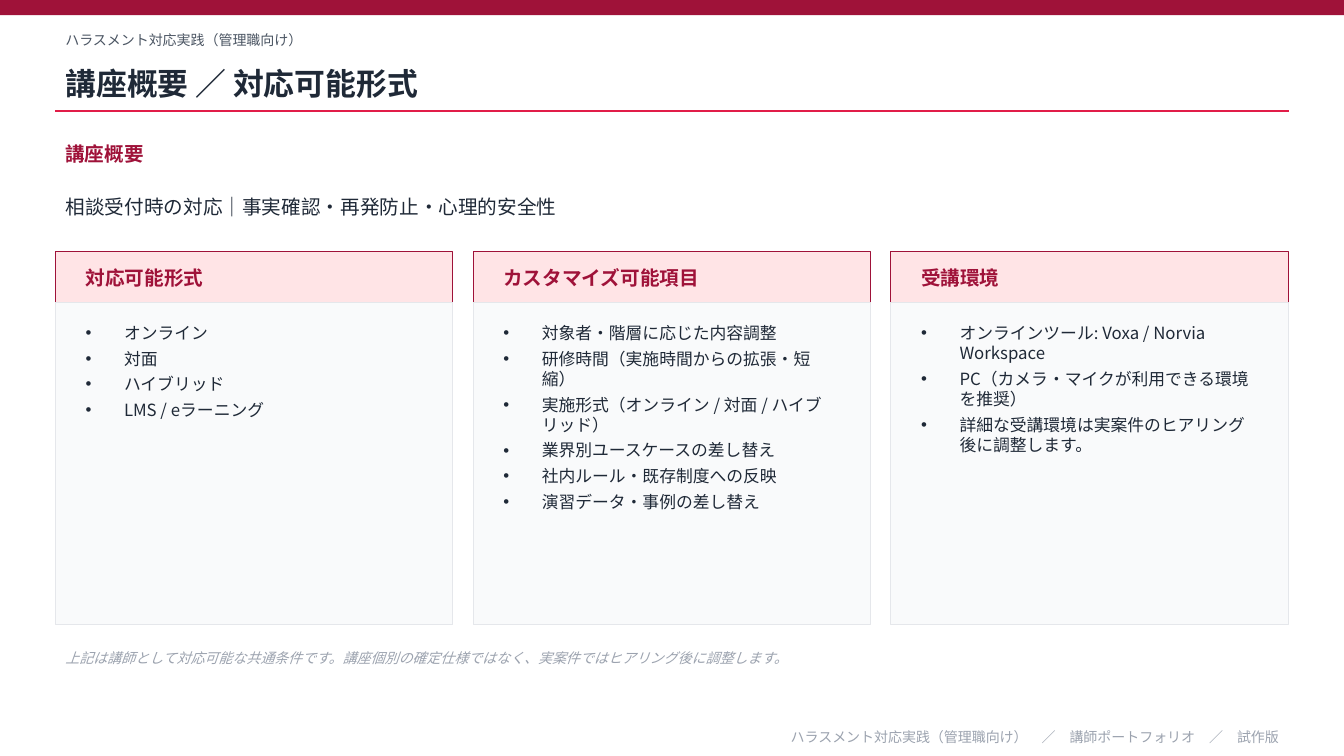
from lxml.etree import SubElement
from pptx import Presentation
from pptx.dml.color import RGBColor
from pptx.enum.shapes import MSO_CONNECTOR, MSO_SHAPE
from pptx.enum.text import MSO_ANCHOR, MSO_AUTO_SIZE, PP_ALIGN
from pptx.oxml.ns import qn
from pptx.util import Inches, Pt

FONT = "Noto Sans CJK JP"
COLORS = {
    "crimson": "9F1239",
    "rose": "E11D48",
    "blush": "FFE4E6",
    "panel": "F9FAFB",
    "border": "E5E7EB",
    "ink": "1F2937",
    "slate": "4B5563",
    "muted": "9CA3AF",
}

# Page grid, in inches
PAGE_WIDTH, PAGE_HEIGHT = 13.33, 7.5
MARGIN = 0.55
CONTENT_WIDTH = PAGE_WIDTH - 2 * MARGIN
CARD_GAP = 0.2
CARD_PADDING = 0.2
CARD_TOP, HEADER_HEIGHT, PANEL_HEIGHT = 2.5, 0.5, 3.2
BULLET_INDENT = 0.38

COURSE = "ハラスメント対応実践（管理職向け）"
CARDS = [
    ("対応可能形式", [
        "オンライン",
        "対面",
        "ハイブリッド",
        "LMS / eラーニング",
    ]),
    ("カスタマイズ可能項目", [
        "対象者・階層に応じた内容調整",
        "研修時間（実施時間からの拡張・短縮）",
        "実施形式（オンライン / 対面 / ハイブリッド）",
        "業界別ユースケースの差し替え",
        "社内ルール・既存制度への反映",
        "演習データ・事例の差し替え",
    ]),
    ("受講環境", [
        "オンラインツール: Voxa / Norvia Workspace",
        "PC（カメラ・マイクが利用できる環境を推奨）",
        "詳細な受講環境は実案件のヒアリング後に調整します。",
    ]),
]


def color(name):
    return RGBColor.from_string(COLORS[name])


def set_bullet(paragraph, bulleted):
    properties = paragraph._p.get_or_add_pPr()
    indent = Inches(BULLET_INDENT) if bulleted else 0
    properties.set("marL", str(indent))
    properties.set("indent", str(-indent))
    if bulleted:
        SubElement(properties, qn("a:buChar")).set("char", "•")
    else:
        SubElement(properties, qn("a:buNone"))


def write(box, lines, size, ink, bold=False, italic=False, bulleted=False,
          align=PP_ALIGN.LEFT):
    frame = box.text_frame
    frame.text = "\n".join(lines)
    frame.word_wrap = True
    frame.auto_size = MSO_AUTO_SIZE.NONE
    frame.vertical_anchor = MSO_ANCHOR.TOP if bulleted else MSO_ANCHOR.MIDDLE
    for paragraph in frame.paragraphs:
        set_bullet(paragraph, bulleted)
        paragraph.alignment = align
        paragraph.space_before = Pt(0)
        paragraph.space_after = Pt(4 if bulleted else 0)
        font = paragraph.font
        font.size, font.bold, font.italic = Pt(size), bold, italic
        font.color.rgb = color(ink)
        font.name = FONT
        # Japanese glyphs take the East Asian typeface
        east_asian = SubElement(paragraph._p.pPr.defRPr, qn("a:ea"))
        east_asian.set("typeface", FONT)


def add_label(slide, area, text, size, ink, **style):
    label = slide.shapes.add_textbox(*map(Inches, area))
    write(label, [text], size, ink, **style)


def fill_placeholder(placeholder, area, lines, size, ink, **style):
    left, top, width, height = map(Inches, area)
    placeholder.left, placeholder.top = left, top
    placeholder.width, placeholder.height = width, height
    # Bring the text in front of the panel behind it
    placeholder.element.getparent().append(placeholder.element)
    write(placeholder, lines, size, ink, **style)


def add_block(slide, area, fill, border=None):
    block = slide.shapes.add_shape(MSO_SHAPE.RECTANGLE, *map(Inches, area))
    block.shadow.inherit = False
    block.fill.solid()
    block.fill.fore_color.rgb = color(fill)
    if border:
        block.line.color.rgb = color(border)
        block.line.width = Pt(0.75)
    else:
        block.line.fill.background()


def add_rule(slide, top):
    rule = slide.shapes.add_connector(
        MSO_CONNECTOR.STRAIGHT, Inches(MARGIN), Inches(top),
        Inches(MARGIN + CONTENT_WIDTH), Inches(top))
    rule.line.color.rgb = color("rose")
    rule.line.width = Pt(1)
    SubElement(rule.element.spPr, qn("a:effectLst"))


def add_card(slide, left, width, heading, items, body):
    panel_top = CARD_TOP + HEADER_HEIGHT
    text_left, text_width = left + CARD_PADDING, width - 2 * CARD_PADDING
    add_block(slide, (left, CARD_TOP, width, HEADER_HEIGHT), "blush", "crimson")
    add_label(slide, (text_left, CARD_TOP, text_width, HEADER_HEIGHT),
              heading, 14, "crimson", bold=True)
    add_block(slide, (left, panel_top, width, PANEL_HEIGHT), "panel", "border")
    fill_placeholder(body, (text_left, panel_top + 0.15, text_width, 2.85),
                     items, 12, "ink", bulleted=True)


def main():
    deck = Presentation()
    deck.slide_width, deck.slide_height = Inches(PAGE_WIDTH), Inches(PAGE_HEIGHT)
    slide = deck.slides.add_slide(deck.slide_layouts.get_by_name("Comparison"))
    title, overview, *card_bodies = list(slide.placeholders)

    # Heading band
    add_block(slide, (0, 0, PAGE_WIDTH, 0.15), "crimson")
    add_label(slide, (MARGIN, 0.25, CONTENT_WIDTH, 0.3), COURSE, 10, "slate")
    fill_placeholder(title, (MARGIN, 0.55, CONTENT_WIDTH, 0.55),
                     ["講座概要 ／ 対応可能形式"], 22, "ink", bold=True)
    add_rule(slide, 1.1)

    # Course overview
    add_label(slide, (MARGIN, 1.35, CONTENT_WIDTH, 0.35),
              "講座概要", 14, "crimson", bold=True)
    fill_placeholder(overview, (MARGIN, 1.75, CONTENT_WIDTH, 0.6),
                     ["相談受付時の対応｜事実確認・再発防止・心理的安全性"], 14, "ink")

    # Three equal cards
    card_width = (CONTENT_WIDTH - CARD_GAP * (len(CARDS) - 1)) / len(CARDS)
    for column, ((heading, items), body) in enumerate(zip(CARDS, card_bodies)):
        left = MARGIN + column * (card_width + CARD_GAP)
        add_card(slide, left, card_width, heading, items, body)

    # Remark and footer
    add_label(slide, (MARGIN, 6.35, CONTENT_WIDTH, 0.35),
              "上記は講師として対応可能な共通条件です。講座個別の確定仕様ではなく、"
              "実案件ではヒアリング後に調整します。", 10, "muted", italic=True)
    add_label(slide, (MARGIN, 7.2, CONTENT_WIDTH, 0.22),
              "　／　".join([COURSE, "講師ポートフォリオ", "試作版"]),
              10, "muted", align=PP_ALIGN.RIGHT)

    deck.save("out.pptx")


if __name__ == "__main__":
    main()
